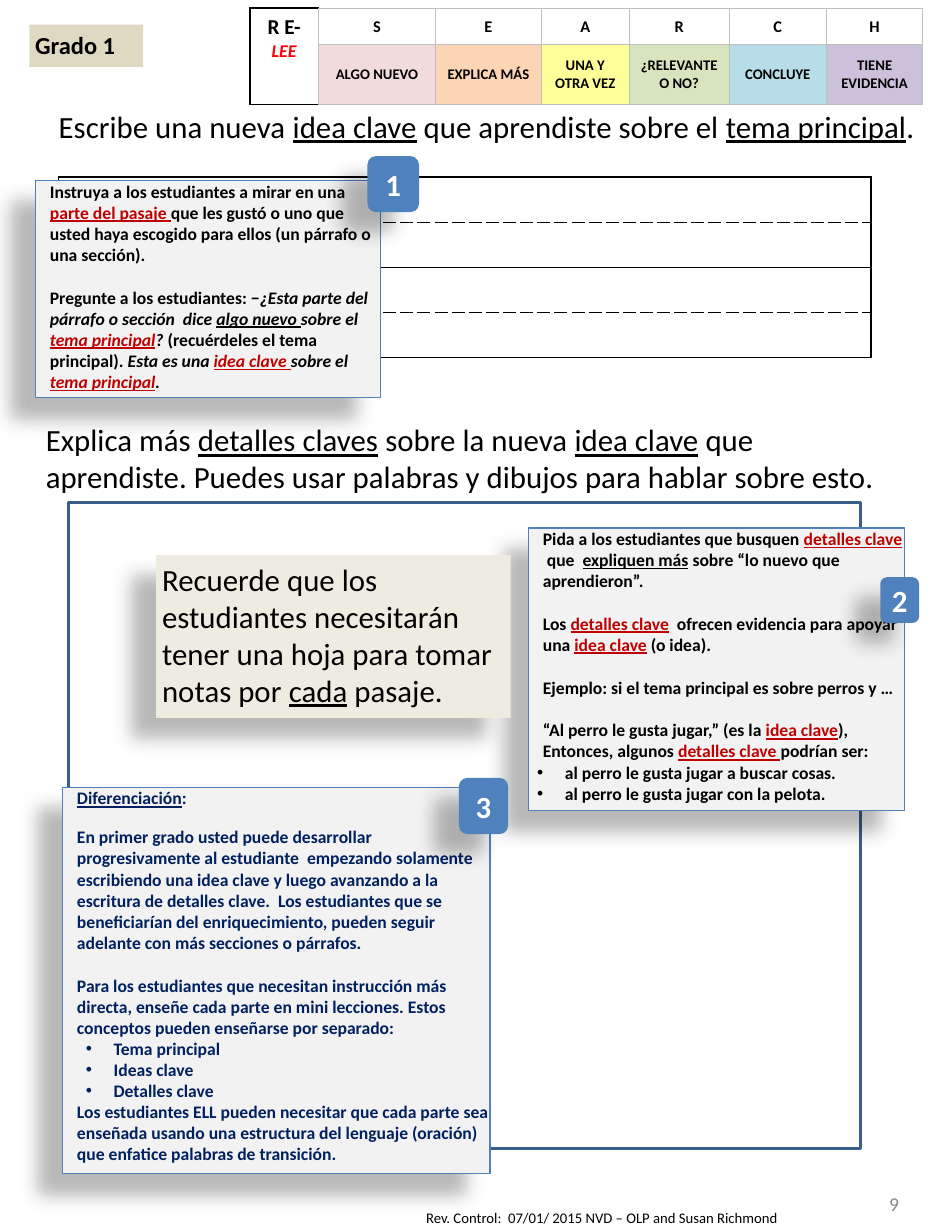
from lxml import etree
from pptx import Presentation
from pptx.dml.color import RGBColor
from pptx.enum.shapes import MSO_SHAPE as Shape
from pptx.enum.text import MSO_ANCHOR as Anchor, MSO_AUTO_SIZE as AutoSize, PP_ALIGN as Align
from pptx.oxml.ns import qn
from pptx.util import Pt

BLACK = RGBColor(0x00, 0x00, 0x00)
WHITE = RGBColor(0xFF, 0xFF, 0xFF)
RED = RGBColor(0xFF, 0x00, 0x00)
KEY_RED = RGBColor(0xC0, 0x00, 0x00)
NAVY = RGBColor(0x00, 0x20, 0x60)
BLUE = RGBColor(0x4F, 0x81, 0xBD)
FRAME_BLUE = RGBColor(0x3A, 0x5E, 0x8A)
NOTE_GRAY = RGBColor(0xF2, 0xF2, 0xF2)
BORDER_GRAY = RGBColor(0xBF, 0xBF, 0xBF)
PAGE_GRAY = RGBColor(0x88, 0x88, 0x88)
TAN = RGBColor(0xDD, 0xD9, 0xC3)
CREAM = RGBColor(0xEE, 0xEC, 0xE1)

FONT = "Calibri"
PROMPT_SIZE, NOTE_SIZE = 18.9, 10.8
INSET = 3.6
LINE_GAP = 13.2
BULLET_HANG = 17

SEARCH_STEPS = [
    ("S", "ALGO NUEVO", 72, RGBColor(0xF2, 0xDC, 0xDB)),
    ("E", "EXPLICA MÁS", 64.8, RGBColor(0xFC, 0xD5, 0xB5)),
    ("A", "UNA Y OTRA VEZ", 54, RGBColor(0xFF, 0xFF, 0x99)),
    ("R", "¿RELEVANTE O NO?", 61.2, RGBColor(0xD7, 0xE4, 0xBD)),
    ("C", "CONCLUYE", 59.8, RGBColor(0xB7, 0xDE, 0xE8)),
    ("H", "TIENE EVIDENCIA", 59, RGBColor(0xCC, 0xC1, 0xDA)),
]

# A run is (text, flags): u underlined, i italic, k red underlined key term.
# A paragraph is (kind, gap before, runs).
MAIN_IDEA_PROMPT = [("Escribe una nueva ", ""), ("idea clave", "u"),
                    (" que aprendiste sobre el ", ""), ("tema principal", "u"), (".", "")]
DETAILS_PROMPT = [("Explica más ", ""), ("detalles claves", "u"), (" sobre la nueva ", ""),
                  ("idea clave", "u"),
                  (" que aprendiste. Puedes usar palabras y dibujos para hablar sobre esto.", "")]
REMINDER = [("Recuerde que los estudiantes necesitarán tener una hoja para tomar notas por ", ""),
            ("cada", "u"), (" pasaje.", "")]
NEW_IDEA_NOTE = [
    ("text", 0, [("Instruya a los estudiantes a mirar en una ", ""), ("parte del pasaje ", "k"),
                 ("que les gustó o uno que usted haya escogido para ellos "
                  "(un párrafo o una sección).", "")]),
    ("text", LINE_GAP, [("Pregunte a los estudiantes: −", ""),
                        ("¿Esta parte del párrafo o sección  dice ", "i"), ("algo nuevo ", "iu"),
                        ("sobre el ", "i"), ("tema principal", "ik"), ("? ", "i"),
                        ("(recuérdeles el tema principal). ", ""), ("Esta es una ", "i"),
                        ("idea clave ", "ik"), ("sobre el ", "i"), ("tema principal", "ik"),
                        (".", "i")]),
]
DETAILS_NOTE = [
    ("text", 0, [("Pida a los estudiantes que busquen ", ""), ("detalles clave", "k"),
                 ("  que  ", ""), ("expliquen más", "u"), (" sobre “lo nuevo que aprendieron”.", "")]),
    ("text", LINE_GAP, [("Los ", ""), ("detalles clave", "k"),
                        ("  ofrecen evidencia para apoyar una ", ""), ("idea clave", "k"),
                        (" (o idea).", "")]),
    ("text", LINE_GAP, [("Ejemplo: si el tema principal es sobre perros y …", "")]),
    ("text", LINE_GAP, [("“Al perro le gusta jugar,” (es la ", ""), ("idea clave", "k"), ("),", "")]),
    ("text", 0, [("Entonces, algunos ", ""), ("detalles clave ", "k"), ("podrían ser:", "")]),
    ("bullet", 0, [("al perro le gusta jugar a buscar cosas.", "")]),
    ("bullet", 0, [("al perro le gusta jugar con la pelota.", "")]),
]
DIFFERENTIATION_NOTE = [
    ("text", 0, [("Diferenciación", "u"), (":", "")]),
    ("text", 11, [("En primer grado usted puede desarrollar progresivamente al estudiante  empezando "
                   "solamente escribiendo una idea clave y luego avanzando a la escritura de detalles "
                   "clave.  Los estudiantes que se beneficiarían del enriquecimiento, pueden seguir "
                   "adelante con más secciones o párrafos.", "")]),
    ("text", LINE_GAP, [("Para los estudiantes que necesitan instrucción más directa, enseñe cada parte "
                         "en mini lecciones. Estos conceptos pueden enseñarse por separado:", "")]),
    *[("bullet", 0, [(concept, "")]) for concept in ("Tema principal", "Ideas clave", "Detalles clave")],
    ("text", 0, [("Los estudiantes ELL pueden necesitar que cada parte sea enseñada usando una estructura "
                  "del lenguaje (oración) que enfatice palabras de transición.", "")]),
]


def add_runs(paragraph, runs, size, color=BLACK, bold=False):
    for words, flags in runs:
        run = paragraph.add_run()
        run.text = words
        font = run.font
        font.name, font.size, font.bold = FONT, Pt(size), bold
        font.italic = "i" in flags
        font.underline = "u" in flags or "k" in flags
        font.color.rgb = KEY_RED if "k" in flags else color


def set_frame(frame, inset=INSET, anchor=Anchor.TOP):
    frame.word_wrap = True
    frame.auto_size = AutoSize.NONE
    frame.vertical_anchor = anchor
    frame.margin_left = frame.margin_right = frame.margin_top = frame.margin_bottom = Pt(inset)


def add_label(slide, box, runs, size, color=BLACK, align=Align.LEFT, **frame_options):
    frame = slide.shapes.add_textbox(*map(Pt, box)).text_frame
    set_frame(frame, **frame_options)
    frame.paragraphs[0].alignment = align
    add_runs(frame.paragraphs[0], runs, size, color)


def add_shadow(shape):
    effects = etree.SubElement(shape._element.spPr, qn("a:effectLst"))
    shadow = etree.SubElement(effects, qn("a:outerShdw"), blurRad=str(Pt(12)), dist=str(Pt(19.7)),
                              dir=str(141 * 60000), algn="tr", rotWithShape="0")
    tint = etree.SubElement(shadow, qn("a:srgbClr"), val=str(BLACK))
    etree.SubElement(tint, qn("a:alpha"), val="28000")


def add_panel(slide, box, fill=None, line=None, line_width=0.75, kind=Shape.RECTANGLE, shadow=False):
    panel = slide.shapes.add_shape(kind, *map(Pt, box))
    if fill is None:
        panel.fill.background()
    else:
        panel.fill.solid()
        panel.fill.fore_color.rgb = fill
    if line is None:
        panel.line.fill.background()
    else:
        panel.line.color.rgb = line
        panel.line.width = Pt(line_width)
    if shadow:
        add_shadow(panel)
    else:
        panel.shadow.inherit = False
    return panel


def add_text_panel(slide, box, runs, size, fill, bold=False, **panel_options):
    frame = add_panel(slide, box, fill, **panel_options).text_frame
    set_frame(frame)
    frame.paragraphs[0].alignment = Align.LEFT
    add_runs(frame.paragraphs[0], runs, size, bold=bold)


def add_note(slide, box, paragraphs, bullet_indent=0, color=BLACK):
    frame = add_panel(slide, box, NOTE_GRAY, BLUE, shadow=True).text_frame
    set_frame(frame, inset=0)
    for index, (kind, gap, runs) in enumerate(paragraphs):
        paragraph = frame.add_paragraph() if index else frame.paragraphs[0]
        paragraph.alignment = Align.LEFT
        paragraph.space_before = Pt(gap)
        props = paragraph._p.get_or_add_pPr()
        props.set("marL", str(Pt(bullet_indent if kind == "bullet" else 9)))
        if kind == "bullet":
            props.set("indent", str(-Pt(BULLET_HANG)))
            etree.SubElement(props, qn("a:buFont"), typeface="Arial")
            etree.SubElement(props, qn("a:buChar"), char="•")
        add_runs(paragraph, runs, NOTE_SIZE, color, bold=True)


def add_badge(slide, box, number):
    frame = add_panel(slide, box, BLUE, kind=Shape.ROUNDED_RECTANGLE, shadow=True).text_frame
    set_frame(frame, inset=0, anchor=Anchor.MIDDLE)
    frame.paragraphs[0].alignment = Align.CENTER
    add_runs(frame.paragraphs[0], [(number, "")], PROMPT_SIZE, WHITE, bold=True)


def add_grid(slide, left, top, widths, heights):
    grid = slide.shapes.add_table(len(heights), len(widths), Pt(left), Pt(top),
                                  Pt(sum(widths)), Pt(sum(heights))).table
    grid.first_row = grid.horz_banding = False
    for column, width in zip(grid.columns, widths):
        column.width = Pt(width)
    for row, height in zip(grid.rows, heights):
        row.height = Pt(height)
    return grid


def format_cell(cell, fill, borders, inset=INSET):
    """Borders are (colour, width, dash) for left, right, top and bottom."""
    cell.margin_left = cell.margin_right = cell.margin_top = cell.margin_bottom = Pt(inset)
    props = cell._tc.get_or_add_tcPr()
    for side, (color, width, dash) in zip(("lnL", "lnR", "lnT", "lnB"), borders):
        edge = etree.SubElement(props, qn(f"a:{side}"), w=str(Pt(width)))
        paint = etree.SubElement(edge, qn("a:solidFill"))
        etree.SubElement(paint, qn("a:srgbClr"), val=str(color))
        etree.SubElement(edge, qn("a:prstDash"), val=dash)
    cell.fill.solid()
    cell.fill.fore_color.rgb = fill


def add_writing_lines(slide):
    solid, dashed = (BLACK, 1, "solid"), (BLACK, 1, "sysDash")
    lines = add_grid(slide, 36, 108.7, [498.2], [27.72] * 4)
    for row in range(4):
        edges = (solid, dashed) if row % 2 == 0 else (dashed, solid)
        format_cell(lines.cell(row, 0), WHITE, (solid, solid, *edges), inset=0)


def add_search_table(slide):
    gray, black = (BORDER_GRAY, 0.5, "solid"), (BLACK, 1, "solid")
    search = add_grid(slide, 153.4, 5, [41.8] + [step[2] for step in SEARCH_STEPS], [22.5, 33.7])
    read_cell = search.cell(0, 0)
    read_cell.merge(search.cell(1, 0))
    for row in range(2):
        format_cell(search.cell(row, 0), WHITE, (black, gray, black, black))
    add_runs(read_cell.text_frame.paragraphs[0], [("R E-", "")], 13, bold=True)
    add_runs(read_cell.text_frame.add_paragraph(), [("LEE", "i")], 11, RED, bold=True)
    for paragraph in read_cell.text_frame.paragraphs:
        paragraph.alignment = Align.CENTER
    for column, (letter, step, _, tint) in enumerate(SEARCH_STEPS, 1):
        for row, (words, size, fill) in enumerate([(letter, 10, WHITE), (step, 9, tint)]):
            cell = search.cell(row, column)
            format_cell(cell, fill, [gray] * 4)
            cell.vertical_anchor = Anchor.MIDDLE
            cell.text_frame.paragraphs[0].alignment = Align.CENTER
            add_runs(cell.text_frame.paragraphs[0], [(words, "")], size, bold=True)


def add_title(slide):
    title = slide.shapes.title
    title.left, title.top, title.width, title.height = map(Pt, (32.4, 62.6, 537.1, 30.2))
    set_frame(title.text_frame)
    title.text_frame.paragraphs[0].alignment = Align.LEFT
    add_runs(title.text_frame.paragraphs[0], MAIN_IDEA_PROMPT, PROMPT_SIZE)


def main():
    deck = Presentation()
    deck.slide_width, deck.slide_height = Pt(576), Pt(756)
    slide = deck.slides.add_slide(deck.slide_layouts[5])

    # Footer and page number
    add_label(slide, (257.8, 738, 288, 18),
              [("Rev. Control:  07/01/ 2015 NVD – OLP and Susan Richmond", "")], 9)
    add_label(slide, (488.9, 727.9, 62.6, 21.6), [("9", "")], 12, PAGE_GRAY, Align.RIGHT,
              inset=0, anchor=Anchor.MIDDLE)

    # Student prompts, writing lines and drawing space
    add_title(slide)
    add_writing_lines(slide)
    add_panel(slide, (41.8, 308.2, 486, 396.7), line=FRAME_BLUE, line_width=2)
    add_label(slide, (24.5, 254.9, 527, 54), DETAILS_PROMPT, PROMPT_SIZE)

    # Numbered teacher notes
    add_note(slide, (21.6, 110.9, 212, 133.2), NEW_IDEA_NOTE)
    add_note(slide, (324, 324, 231.1, 173.5), DETAILS_NOTE, bullet_indent=22.5)
    add_note(slide, (38.2, 483.1, 262.4, 237.2), DIFFERENTIATION_NOTE, bullet_indent=31.5, color=NAVY)
    add_badge(slide, (225.4, 95.8, 31.7, 34.4), "1")
    add_badge(slide, (540, 354.2, 23.8, 28.1), "2")
    add_badge(slide, (281.5, 477.4, 30.2, 34.4), "3")
    add_text_panel(slide, (95.8, 340.6, 217.4, 100), REMINDER, PROMPT_SIZE, CREAM, shadow=True)

    # Grade label and strategy table
    add_text_panel(slide, (18, 15.1, 69.8, 25.9), [("Grado 1", "")], 15, TAN, bold=True)
    add_search_table(slide)

    deck.save("out.pptx")


if __name__ == "__main__":
    main()
